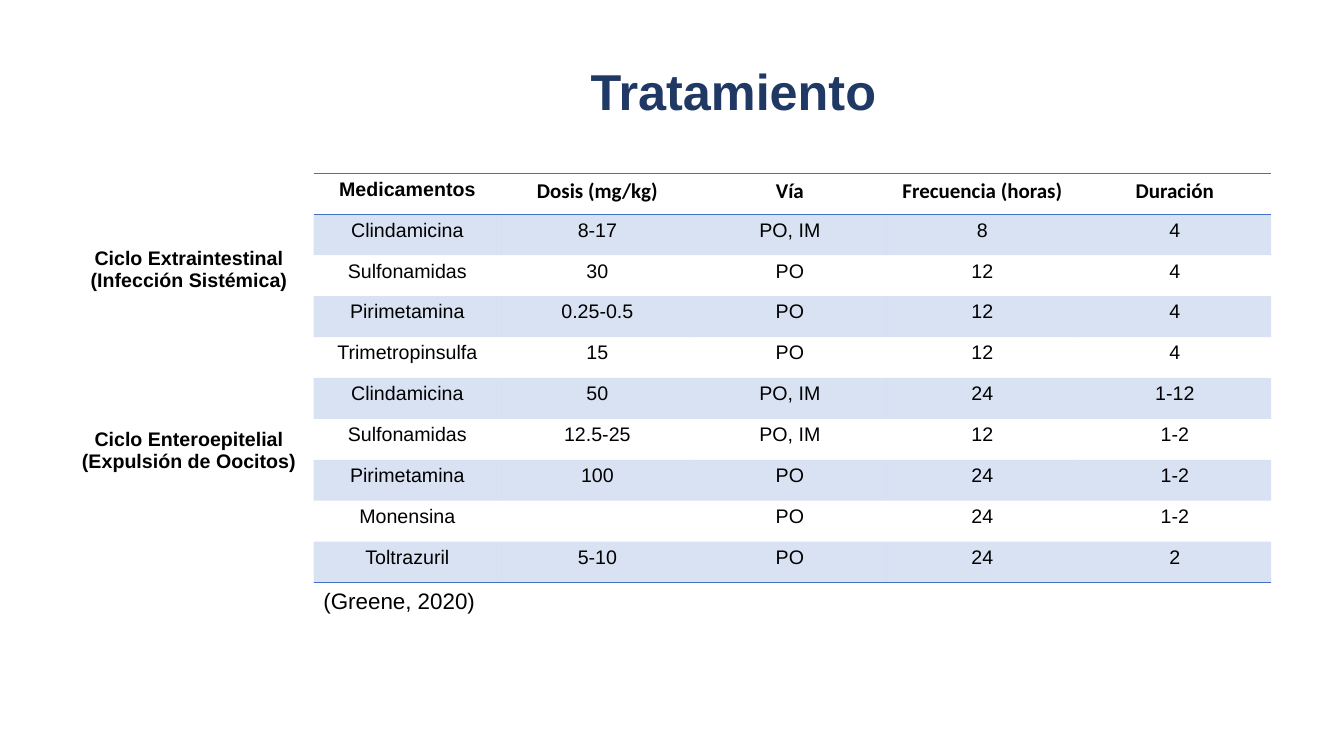
from lxml import etree
from pptx import Presentation
from pptx.dml.color import RGBColor
from pptx.enum.text import MSO_ANCHOR, PP_ALIGN
from pptx.oxml.ns import qn
from pptx.util import Pt

CENTER, LEFT = PP_ALIGN.CENTER, PP_ALIGN.LEFT
TOP = MSO_ANCHOR.TOP
BLACK = RGBColor(0x00, 0x00, 0x00)
NAVY = RGBColor(0x20, 0x38, 0x64)
BLUE = RGBColor(0x44, 0x72, 0xC4)
PLAIN_TABLE = "{2D5ABB26-0587-4C30-8999-92F81FD0307C}"
BAND_ALPHA = 20

TABLE_TOP, TABLE_HEIGHT = 123.84, 292.3
CYCLE_LEFT, CYCLE_WIDTH = 46, 178
DRUG_LEFT = CYCLE_LEFT + CYCLE_WIDTH

HEADINGS = ["Medicamentos", "Dosis (mg/kg)", "Vía", "Frecuencia (horas)", "Duración"]
DRUGS = [
    ["Clindamicina", "8-17", "PO, IM", "8", "4"],
    ["Sulfonamidas", "30", "PO", "12", "4"],
    ["Pirimetamina", "0.25-0.5", "PO", "12", "4"],
    ["Trimetropinsulfa", "15", "PO", "12", "4"],
    ["Clindamicina", "50", "PO, IM", "24", "1-12"],
    ["Sulfonamidas", "12.5-25", "PO, IM", "12", "1-2"],
    ["Pirimetamina", "100", "PO", "24", "1-2"],
    ["Monensina", "", "PO", "24", "1-2"],
    ["Toltrazuril", "5-10", "PO", "24", "2"],
]
# Each cycle with the distance of its text from the top of its cell
CYCLES = [
    ("Ciclo Extraintestinal (Infección Sistémica)", 53),
    ("Ciclo Enteroepitelial (Expulsión de Oocitos)", 36.5),
]


def write(frame, text, size=14, font="Arial", color=BLACK, bold=False, align=CENTER):
    paragraph = frame.paragraphs[0]
    paragraph.alignment = align
    paragraph.font.size = Pt(size)
    if text:
        run = paragraph.add_run()
        run.text = text
        run.font.size, run.font.name, run.font.bold = Pt(size), font, bold
        run.font.color.rgb = color


class TreatmentSlide:
    def __init__(self, presentation):
        self.slide = presentation.slides.add_slide(presentation.slide_layouts[5])

    def title(self, text, left, top, width, height):
        heading = self.slide.shapes.title
        heading.left, heading.top = Pt(left), Pt(top)
        heading.width, heading.height = Pt(width), Pt(height)
        heading.text_frame.vertical_anchor = TOP
        write(heading.text_frame, text, size=36, color=NAVY, bold=True)

    def label(self, text, left, top, width, height, **style):
        box = self.slide.shapes.add_textbox(Pt(left), Pt(top), Pt(width), Pt(height))
        box.text_frame.word_wrap = True
        write(box.text_frame, text, **style)

    def table(self, left, widths, row_count):
        frame = self.slide.shapes.add_table(
            row_count, len(widths), Pt(left), Pt(TABLE_TOP), Pt(sum(widths)), Pt(TABLE_HEIGHT))
        table = frame.table
        table.first_row = table.horz_banding = False
        table._tbl.tblPr.find(qn("a:tableStyleId")).text = PLAIN_TABLE
        for column, width in zip(table.columns, widths):
            column.width = Pt(width)
        for row in table.rows:
            row.height = Pt(TABLE_HEIGHT / row_count)
        return table

    def rule(self, cell, side):
        line = etree.SubElement(cell._tc.get_or_add_tcPr(), qn(f"a:{side}"), w=str(Pt(1)))
        fill = etree.SubElement(line, qn("a:solidFill"))
        etree.SubElement(fill, qn("a:srgbClr"), val=str(BLUE))

    def band(self, cell):
        cell.fill.solid()
        cell.fill.fore_color.rgb = BLUE
        tint = cell._tc.tcPr.find(qn("a:solidFill")).find(qn("a:srgbClr"))
        etree.SubElement(tint, qn("a:alpha"), val=str(BAND_ALPHA * 1000))

    def drug_table(self):
        rows = [HEADINGS] + DRUGS
        table = self.table(DRUG_LEFT, [134] + [137.5] * 4, len(rows))
        for r, values in enumerate(rows):
            for c, value in enumerate(values):
                cell = table.cell(r, c)
                if r == 0:
                    self.rule(cell, "lnT")
                if r in (0, len(rows) - 1):
                    self.rule(cell, "lnB")
                if r % 2:
                    self.band(cell)
                else:
                    cell.fill.background()
                if r == 0 and c > 0:
                    write(cell.text_frame, value, size=15, font="Calibri", bold=True)
                else:
                    write(cell.text_frame, value, bold=r == 0)

    def cycle_table(self):
        table = self.table(CYCLE_LEFT, [CYCLE_WIDTH], len(CYCLES))
        for r, (cycle, drop) in enumerate(CYCLES):
            cell = table.cell(r, 0)
            cell.fill.background()
            cell.margin_top = Pt(drop)
            write(cell.text_frame, cycle, bold=True)


def main():
    presentation = Presentation()
    presentation.slide_width, presentation.slide_height = Pt(960), Pt(540)
    treatment = TreatmentSlide(presentation)

    # Title
    treatment.title("Tratamiento", 391, 39.6, 265.7, 51)

    # Drugs and the cycle each group treats
    treatment.drug_table()
    treatment.cycle_table()

    # Citation
    treatment.label("(Greene, 2020)", DRUG_LEFT, TABLE_TOP + TABLE_HEIGHT, 144, 26.6,
                    size=16, align=LEFT)

    presentation.save("out.pptx")


if __name__ == "__main__":
    main()
